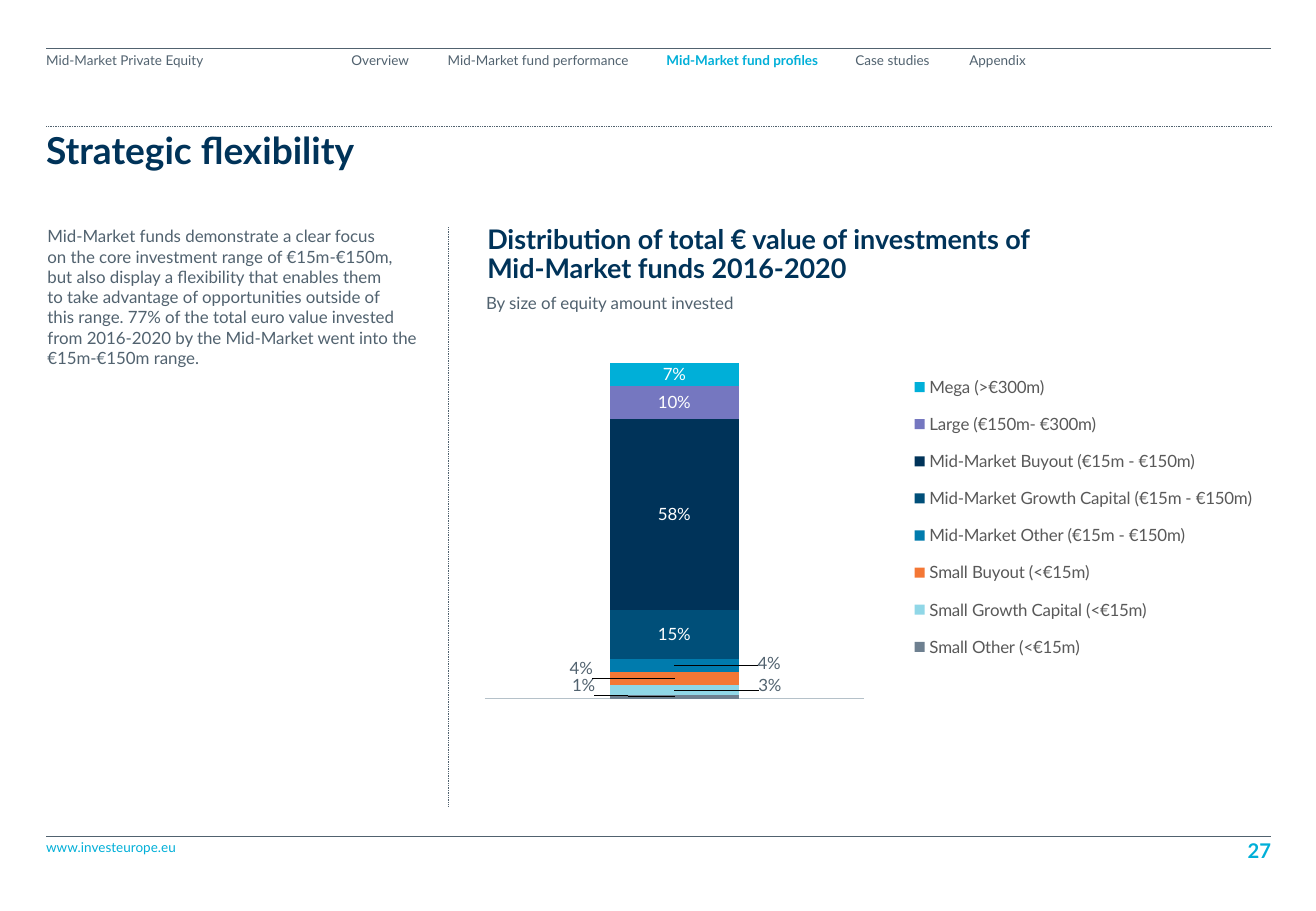
from lxml.etree import SubElement
from pptx import Presentation
from pptx.chart.data import CategoryChartData
from pptx.dml.color import RGBColor
from pptx.enum.chart import XL_CHART_TYPE as Kind, XL_LABEL_POSITION as Spot, XL_LEGEND_POSITION as Side
from pptx.enum.dml import MSO_LINE as Dash
from pptx.enum.shapes import MSO_CONNECTOR as Link
from pptx.enum.text import MSO_ANCHOR as Anchor, PP_ALIGN as Align
from pptx.oxml import parse_xml
from pptx.oxml.ns import nsdecls, qn
from pptx.util import Inches, Pt

FACE = "Lato"
GREY, CYAN, NAVY, WHITE = "51626F", "00AFD8", "003359", "FFFFFF"

NAV = [
    ("Overview", 2.81, 0.64),
    ("Mid-Market fund performance", 3.64, 1.58),
    ("Mid-Market fund profiles", 5.46, 1.3),
    ("Case studies", 7, 0.69),
    ("Appendix", 7.94, 0.54),
]

BODY = "\v".join([
    "Mid-Market funds demonstrate a clear focus",
    "on the core investment range of €15m-€150m,",
    "but also display a flexibility that enables them",
    "to take advantage of opportunities outside of",
    "this range. 77% of the total euro value invested "
    "from 2016-2020 by the Mid-Market went into the",
    "€15m-€150m range.",
])

BANDS = [
    ("Small Other (<€15m)", 0.01, "6E8090", (-0.11, -0.024)),
    ("Small Growth Capital (<€15m)", 0.03, "90D7E7", (0.116, -0.01)),
    ("Small Buyout (<€15m)", 0.04, "F47735", (-0.113, -0.022)),
    ("Mid-Market Other (€15m - €150m)", 0.04, "007BAD", (0.115, -0.006)),
    ("Mid-Market Growth Capital (€15m - €150m)", 0.15, "004F79", None),
    ("Mid-Market Buyout (€15m - €150m)", 0.58, NAVY, None),
    ("Large (€150m- €300m)", 0.1, "7577C0", None),
    ("Mega (>€300m)", 0.07, CYAN, None),
]


def paint(code):
    return RGBColor.from_string(code)


def apply(item, look):
    for name, value in look.items():
        setattr(item, name, value)


def style(font, size, tint, bold=False):
    apply(font, {"name": FACE, "size": Pt(size), "bold": bold})
    font.color.rgb = paint(tint)


def add_text(slide, text, box, size, tint, bold=False, form=None, top=0, anchor=Anchor.TOP):
    frame = slide.shapes.add_textbox(*map(Inches, box)).text_frame
    apply(frame, {
        "word_wrap": True, "vertical_anchor": anchor, "margin_left": 0,
        "margin_right": 0, "margin_top": Inches(top), "margin_bottom": 0,
    })
    frame.text = text
    for para in frame.paragraphs:
        apply(para, form or {})
        for run in para.runs:
            style(run.font, size, tint, bold)


def add_line(slide, start, end, tint=GREY, width=0.5, dash=None):
    rule = slide.shapes.add_connector(Link.STRAIGHT, *map(Inches, start + end))
    SubElement(rule._element.spPr, qn("a:effectLst"))
    rule.line.color.rgb = paint(tint)
    apply(rule.line, {"width": Pt(width), "dash_style": dash})


def place(node, index, parts):
    for old in node.findall(qn("c:layout")):
        node.remove(old)
    inner = "".join(f'<c:{tag} val="{value}"/>' for tag, value in parts.items())
    node.insert(index, parse_xml(
        f'<c:layout {nsdecls("c")}><c:manualLayout>{inner}</c:manualLayout></c:layout>'))


def label(band, shift):
    tags = band.data_labels
    apply(tags, {"show_value": True, "position": Spot.CENTER,
                 "number_format": "0%", "number_format_is_linked": False})
    style(tags.font, 10, GREY if shift else WHITE)
    for lead in tags._element.findall(qn("c:showLeaderLines")):
        tags._element.remove(lead)
    if shift:
        tag = band.points[0].data_label
        style(tag.font, 10, GREY)
        tag.position = Spot.CENTER
        node = tags._element.find(qn("c:dLbl"))
        place(node, 1, dict(zip("xy", shift)))
        node.insert(2, parse_xml(
            f'<c:numFmt {nsdecls("c")} formatCode="0%" sourceLinked="0"/>'))


def add_bars(slide, box):
    data = CategoryChartData(number_format="0%")
    data.categories = ["1"]
    for name, value, _, _ in BANDS:
        data.add_series(name, [value])
    chart = slide.shapes.add_chart(Kind.COLUMN_STACKED, *map(Inches, box), data).chart
    apply(chart, {"has_title": False, "has_legend": True})
    style(chart.font, 10, "000000")
    apply(chart.category_axis, {"visible": False, "has_major_gridlines": False})
    apply(chart.value_axis, {"visible": False, "has_major_gridlines": False,
                             "minimum_scale": 0, "maximum_scale": 1.2})
    plot = chart.plots[0]
    apply(plot, {"gap_width": 194, "overlap": 100, "vary_by_categories": False})
    for band, (_, _, tint, shift) in zip(plot.series, BANDS):
        band.format.fill.solid()
        band.format.fill.fore_color.rgb = paint(tint)
        label(band, shift)
    apply(chart.legend, {"position": Side.RIGHT, "include_in_layout": False})
    style(chart.legend.font, 10, "595959")
    modes = {"xMode": "edge", "yMode": "edge"}
    place(chart._chartSpace.chart.plotArea, 0, {
        "layoutTarget": "inner", **modes, "x": 0.023, "y": 0.037, "w": 0.461, "h": 0.793})
    place(chart.legend._element, 1, {**modes, "x": 0.53, "y": 0.15, "w": 0.44, "h": 0.63})


def main():
    deck = Presentation()
    apply(deck, {"slide_width": Inches(10.83), "slide_height": Inches(7.5)})
    slide = deck.slides.add_slide(deck.slide_layouts[6])
    tight = {"line_spacing": 0.9}
    mid = {"alignment": Align.CENTER, **tight}

    for y, dash in ((0.4, None), (6.89, None), (1.04, Dash.ROUND_DOT)):
        add_line(slide, (0.38, y), (10.46, y), dash=dash)
    add_line(slide, (3.69, 1.87), (3.69, 6.64), dash=Dash.ROUND_DOT)
    add_line(slide, (3.99, 5.75), (7.11, 5.75), "B5C1C9", 1)

    add_text(slide, "Mid-Market Private Equity", (0.38, 0.4, 1.89, 0.46), 8, GREY,
             form=tight, top=0.04)
    for name, x, width in NAV:
        now = name == "Mid-Market fund profiles"
        add_text(slide, name, (x, 0.4, width, 0.16), 8, CYAN if now else GREY, now, mid, 0.04)

    add_text(slide, "Strategic flexibility", (0.38, 1.05, 10.08, 0.41), 22, NAVY, True, tight, 0.04)
    add_text(slide, BODY, (0.39, 1.86, 3.15, 2.34), 10, GREY)
    add_text(slide, "Distribution of total € value of investments of\nMid-Market funds 2016-2020",
             (4.01, 1.86, 6.45, 0.48), 16, NAVY, True, tight)
    add_text(slide, "By size of equity amount invested", (4, 2.41, 6.46, 0.22), 10, GREY)
    add_bars(slide, (3.83, 2.35, 6.78, 4.1))

    add_text(slide, "www.investeurope.eu", (0.38, 6.91, 3.66, 0.13), 8, CYAN)
    add_text(slide, "27", (8.02, 6.9, 2.44, 0.2), 12, CYAN, True,
             {"alignment": Align.RIGHT}, anchor=Anchor.BOTTOM)
    deck.save("out.pptx")


if __name__ == "__main__":
    main()
